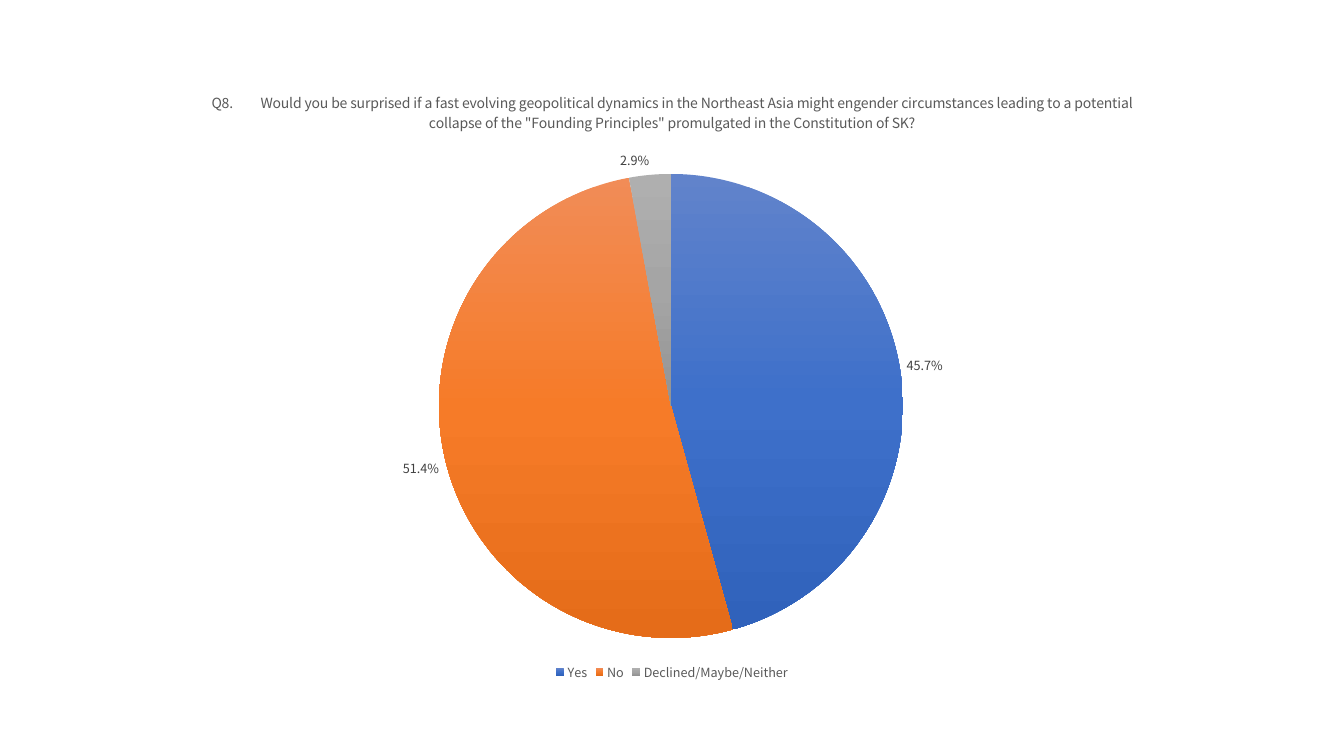
from copy import deepcopy

from lxml import etree
from pptx import Presentation
from pptx.chart.data import CategoryChartData
from pptx.dml.color import RGBColor
from pptx.enum.chart import XL_CHART_TYPE, XL_LABEL_POSITION, XL_LEGEND_POSITION
from pptx.oxml.ns import qn
from pptx.util import Emu, Pt

PIE = XL_CHART_TYPE.PIE
OUTSIDE_END = XL_LABEL_POSITION.OUTSIDE_END
BOTTOM = XL_LEGEND_POSITION.BOTTOM

PX = 9144000 / 1008
SLIDE_SIZE = (1344, 756)
CHART_BOX = (71, 71, 1202, 614)
PIE_BOX = (368, 103, 464, 464)

FONT = "Noto Sans CJK KR"
BLACK = RGBColor(0x00, 0x00, 0x00)
GREY = RGBColor(0x59, 0x59, 0x59)
DARK_GREY = RGBColor(0x40, 0x40, 0x40)
BLUES = (RGBColor(0x61, 0x83, 0xCB), RGBColor(0x3E, 0x70, 0xCA), RGBColor(0x30, 0x62, 0xBB))
ORANGES = (RGBColor(0xF1, 0x8C, 0x57), RGBColor(0xF6, 0x7B, 0x28), RGBColor(0xE5, 0x6C, 0x19))
GREYS = (RGBColor(0xAF, 0xAF, 0xAF), RGBColor(0xA5, 0xA5, 0xA5), RGBColor(0x93, 0x93, 0x93))

QUESTION = (
    "Q8.         Would you be surprised if a fast evolving geopolitical dynamics "
    "in the Northeast Asia might engender circumstances leading to a potential "
    "collapse of the \"Founding Principles\" promulgated in the Constitution of SK?"
)
ANSWERS = (
    ("Yes", 0.457, BLUES),
    ("No", 0.514, ORANGES),
    ("Declined/Maybe/Neither", 0.029, GREYS),
)


def px(length):
    return Emu(round(length * PX))


def format_font(font, size, color):
    values = {"name": FONT, "size": Pt(size), "bold": False}
    for name, value in values.items():
        setattr(font, name, value)
    font.color.rgb = color


def fill_slices(chart, series):
    for index, (_, _, colors) in enumerate(ANSWERS):
        fill = series.points[index].format.fill
        fill.gradient()
        fill.gradient_angle = 270
        stop_list = chart.element.findall(".//" + qn("a:gsLst"))[index]
        stop_list.insert(1, deepcopy(stop_list[0]))
        for stop, color, position in zip(fill.gradient_stops, colors, (0, 0.5, 1)):
            stop.color.rgb = color
            stop.position = position


def place_pie(chart, box, chart_size):
    plot_area = chart.element.find(".//" + qn("c:plotArea"))
    for old_layout in plot_area.findall(qn("c:layout")):
        plot_area.remove(old_layout)
    layout = etree.Element(qn("c:layout"))
    manual = etree.SubElement(layout, qn("c:manualLayout"))
    left, top, width, height = box
    chart_width, chart_height = chart_size
    settings = {
        "layoutTarget": "inner",
        "xMode": "edge",
        "yMode": "edge",
        "x": left / chart_width,
        "y": top / chart_height,
        "w": width / chart_width,
        "h": height / chart_height,
    }
    for name, value in settings.items():
        etree.SubElement(manual, qn("c:" + name)).set("val", str(value))
    plot_area.insert(0, layout)


def add_answer_chart(slide, box):
    data = CategoryChartData(number_format="0.0%")
    data.categories = [answer for answer, _, _ in ANSWERS]
    data.add_series(QUESTION, [share for _, share, _ in ANSWERS])
    chart = slide.shapes.add_chart(PIE, *map(px, box), data).chart
    format_font(chart.font, 10, BLACK)

    chart.has_title = True
    title_frame = chart.chart_title.text_frame
    title_frame.text = QUESTION
    format_font(title_frame.paragraphs[0].runs[0].font, 10, GREY)
    chart.chart_title.include_in_layout = False

    chart.has_legend = True
    chart.legend.position = BOTTOM
    chart.legend.include_in_layout = False
    format_font(chart.legend.font, 9, GREY)

    plot = chart.plots[0]
    plot.vary_by_categories = True
    series = plot.series[0]
    fill_slices(chart, series)
    labels = series.data_labels
    label_values = {
        "show_value": True,
        "show_percentage": False,
        "number_format": "0.0%",
        "number_format_is_linked": False,
        "position": OUTSIDE_END,
    }
    for name, value in label_values.items():
        setattr(labels, name, value)
    format_font(labels.font, 9, DARK_GREY)
    place_pie(chart, PIE_BOX, box[2:])


def main():
    presentation = Presentation()
    presentation.slide_width, presentation.slide_height = map(px, SLIDE_SIZE)
    slide = presentation.slides.add_slide(presentation.slide_layouts[6])
    add_answer_chart(slide, CHART_BOX)
    presentation.save("out.pptx")


if __name__ == "__main__":
    main()
